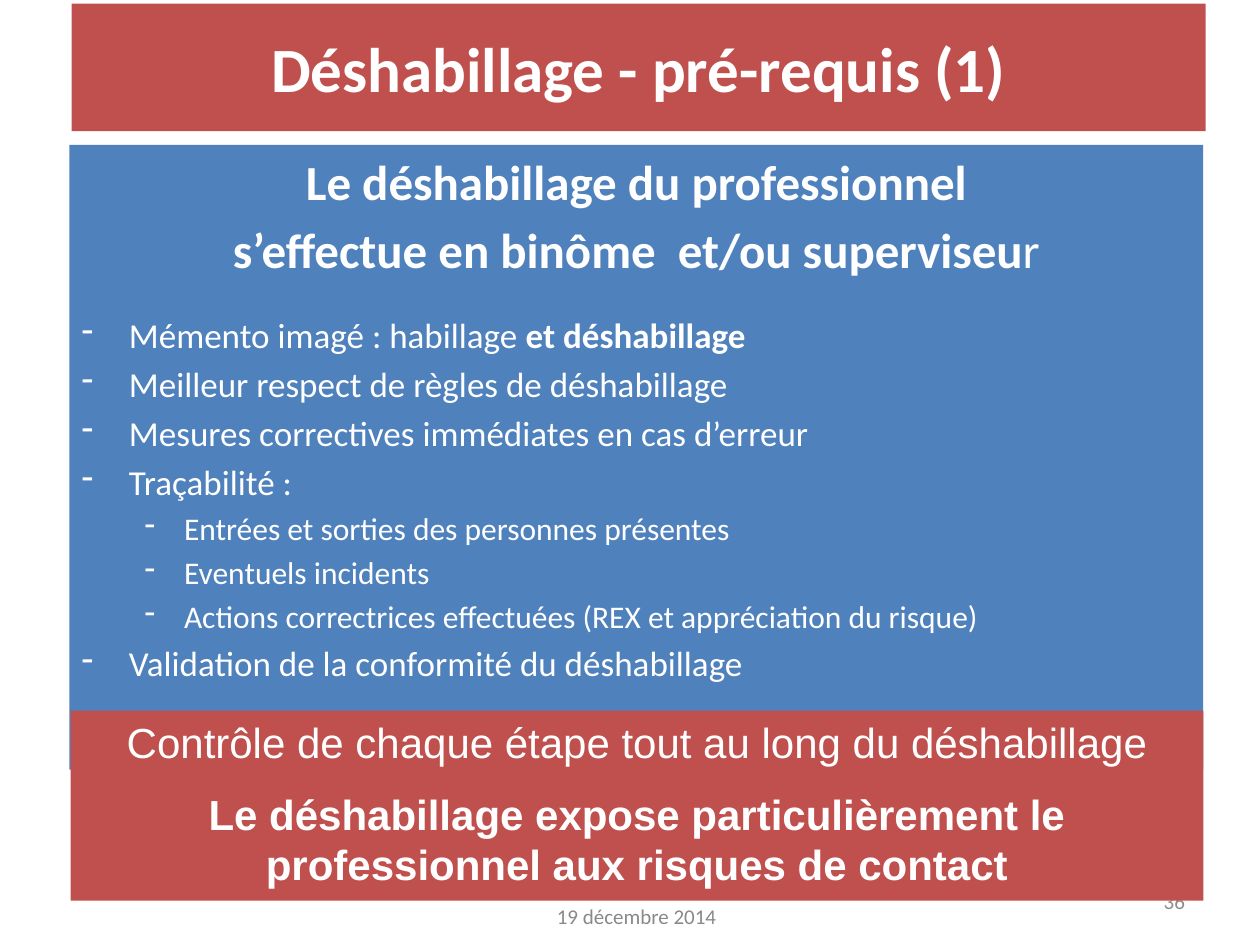
import pptx
import pptx.dml.color
import pptx.enum.shapes
import pptx.enum.text
import pptx.oxml.ns
import pptx.util
from lxml import etree

Pt = pptx.util.Pt
ALIGN = pptx.enum.text.PP_ALIGN
ANCHOR = pptx.enum.text.MSO_ANCHOR
COLORS = {"red": "C0504D", "blue": "4F81BD", "white": "FFFFFF",
          "date": "898989", "number": "8C8C8C"}

# (text, level)
DASH_ITEMS = [
    ("Meilleur respect de règles de déshabillage", 0),
    ("Mesures correctives immédiates en cas d’erreur", 0),
    ("Traçabilité :", 0),
    ("Entrées et sorties des personnes présentes", 1),
    ("Eventuels incidents", 1),
    ("Actions correctrices effectuées (REX et appréciation du risque)", 1),
    ("Validation de la conformité du déshabillage", 0),
]
# level: (left margin, hanging indent, text size)
DASH_LEVELS = {0: (27, 27, 20), 1: (58.5, 22.5, 18)}


def rgb(name):
    return pptx.dml.color.RGBColor.from_string(COLORS[name])


def fill_plain(shape, color):
    shape.fill.solid()
    shape.fill.fore_color.rgb = rgb(color)
    shape.line.fill.background()


def add_panel(slide, left, top, width, height, color):
    """Add a plain filled rectangle and return its text frame."""
    shape = slide.shapes.add_shape(pptx.enum.shapes.MSO_SHAPE.RECTANGLE,
                                   Pt(left), Pt(top), Pt(width), Pt(height))
    shape.shadow.inherit = False
    fill_plain(shape, color)
    shape.text_frame.word_wrap = True
    shape.text_frame.vertical_anchor = ANCHOR.TOP
    return shape.text_frame


def add_paragraph(frame, text, size, font="Calibri", color="white", bold=False,
                  align=ALIGN.CENTER, before=0):
    """Fill the frame's first paragraph, or append one if it is taken."""
    first = frame.paragraphs[0]
    paragraph = frame.add_paragraph() if first.runs else first
    paragraph.add_run().text = text
    paragraph.alignment = align
    if before:
        paragraph.space_before = Pt(before)
    paragraph.font.name = font
    paragraph.font.size = Pt(size)
    paragraph.font.color.rgb = rgb(color)
    if bold is not None:
        paragraph.font.bold = bold
    return paragraph


def add_dash_item(frame, text, level=0, before=None):
    margin, hanging, size = DASH_LEVELS[level]
    paragraph = add_paragraph(frame, text, size, align=ALIGN.JUSTIFY,
                              before=before or size * 0.2)
    paragraph.level = level
    properties = paragraph._p.get_or_add_pPr()
    properties.set("marL", str(Pt(margin)))
    properties.set("indent", str(-Pt(hanging)))
    bullet = etree.Element(pptx.oxml.ns.qn("a:buChar"), char="-")
    properties.find(pptx.oxml.ns.qn("a:defRPr")).addprevious(bullet)
    return paragraph


def add_footer_text(slide, left, top, width, text, color, align):
    box = slide.shapes.add_textbox(Pt(left), Pt(top), Pt(width), Pt(28.8))
    box.text_frame.word_wrap = True
    box.text_frame.vertical_anchor = ANCHOR.MIDDLE
    add_paragraph(box.text_frame, text, 12, color=color, align=align)


def format_title(slide):
    title = slide.shapes.title
    title.left, title.top, title.width, title.height = Pt(41), Pt(2), Pt(648), Pt(73)
    fill_plain(title, "red")
    frame = title.text_frame
    frame.auto_size = pptx.enum.text.MSO_AUTO_SIZE.NONE
    frame.vertical_anchor = ANCHOR.MIDDLE
    add_paragraph(frame, "Déshabillage - pré-requis (1)", 36, bold=True)


def add_body(slide):
    frame = add_panel(slide, 39.6, 82.8, 648, 357, "blue")
    add_paragraph(frame, "Le déshabillage du professionnel", 28, bold=True)
    heading = add_paragraph(frame, "s’effectue en binôme  et/ou superviseu", 28,
                            bold=None, before=5.6)
    heading.runs[0].font.bold = True
    heading.add_run().text = "r"
    memento = add_dash_item(frame, "Mémento imagé : habillage ", before=20)
    bold_run = memento.add_run()
    bold_run.text = "et déshabillage"
    bold_run.font.bold = True
    for text, level in DASH_ITEMS:
        add_dash_item(frame, text, level)


def add_warning(slide):
    frame = add_panel(slide, 40.3, 406, 647.3, 108.7, "red")
    add_paragraph(frame, "Contrôle de chaque étape tout au long du déshabillage",
                  24, "Arial")
    add_paragraph(frame, "Le déshabillage expose particulièrement le "
                  "professionnel aux risques de contact",
                  24, "Arial", bold=True, before=12)


def main():
    presentation = pptx.Presentation()
    presentation.slide_width, presentation.slide_height = Pt(720), Pt(540)
    slide = presentation.slides.add_slide(presentation.slide_layouts[5])
    add_footer_text(slide, 249.8, 509, 228, "19 décembre 2014", "date", ALIGN.CENTER)
    add_footer_text(slide, 516.2, 500.4, 168, "36", "number", ALIGN.RIGHT)
    format_title(slide)
    add_body(slide)
    add_warning(slide)
    presentation.save("out.pptx")


if __name__ == "__main__":
    main()
